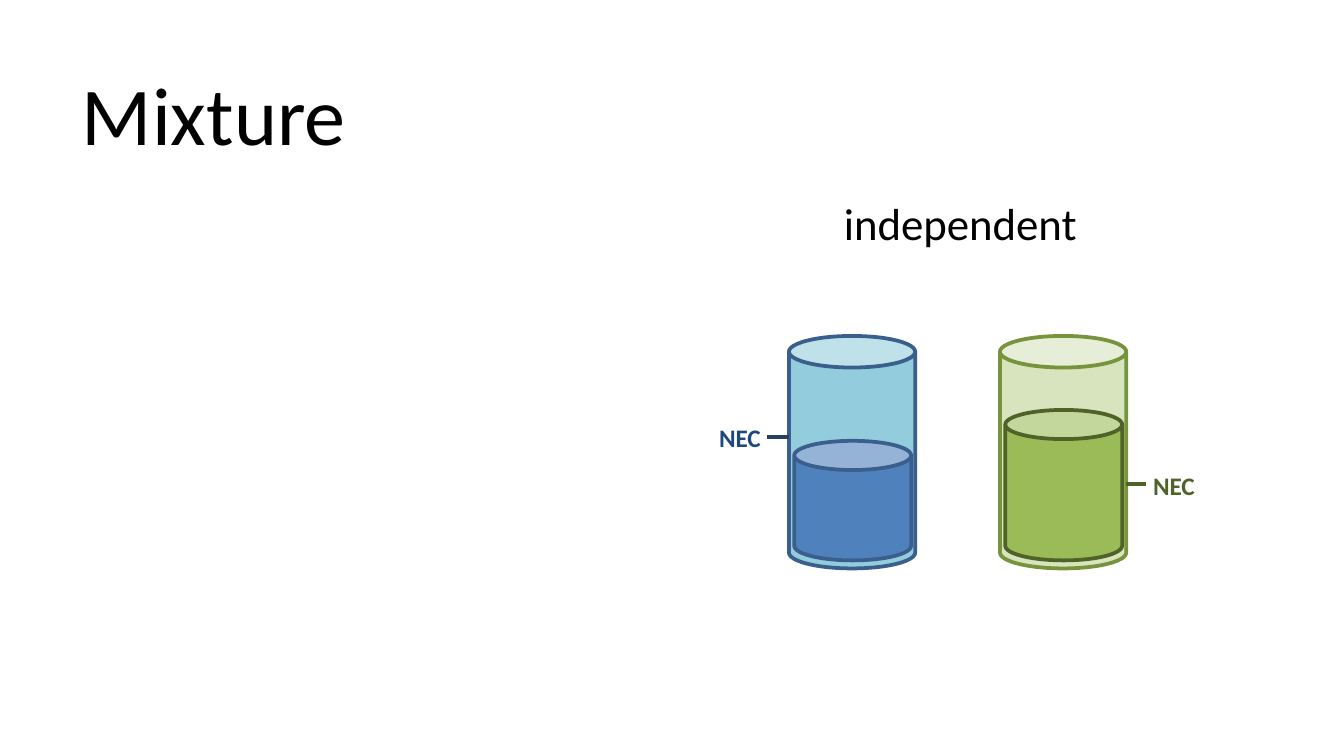
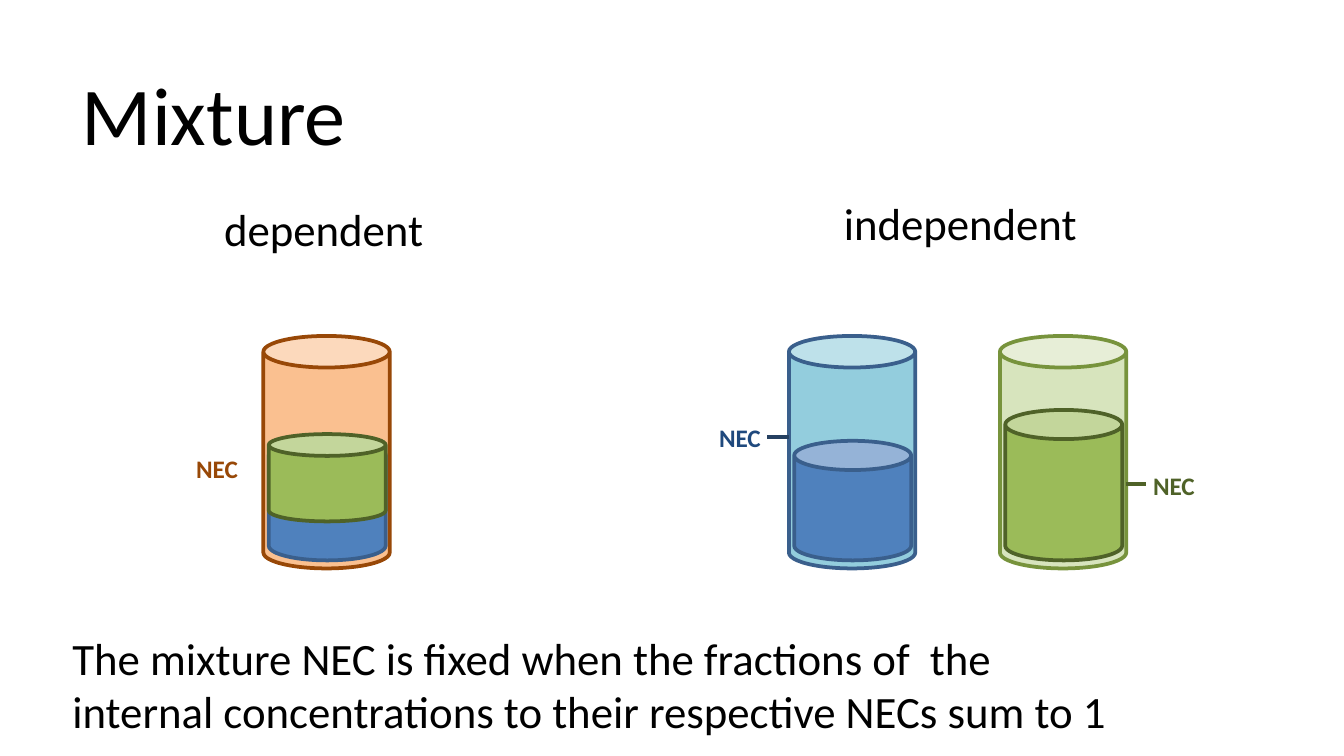
from pptx import Presentation
from pptx.util import Inches, Pt
from pptx.dml.color import RGBColor
from pptx.enum.shapes import MSO_SHAPE as Shape, MSO_CONNECTOR as Wire
from pptx.enum.text import PP_ALIGN as Align, MSO_ANCHOR as Anchor, MSO_AUTO_SIZE as Fit
from pptx.oxml.ns import qn
from lxml import etree

FONT = "Calibri"
BLACK = RGBColor(0x00, 0x00, 0x00)
WHITE = RGBColor(0xFF, 0xFF, 0xFF)
AQUA = RGBColor(0x93, 0xCD, 0xDD)
BLUE = RGBColor(0x4F, 0x81, 0xBD)
STEEL = RGBColor(0x3A, 0x5F, 0x8C)
NAVY = RGBColor(0x1F, 0x49, 0x7D)
DEEP = RGBColor(0x25, 0x40, 0x61)
PALE = RGBColor(0xD7, 0xE4, 0xBD)
GREEN = RGBColor(0x9B, 0xBB, 0x59)
OLIVE = RGBColor(0x77, 0x93, 0x3C)
MOSS = RGBColor(0x4F, 0x62, 0x28)
PEACH = RGBColor(0xFA, 0xC0, 0x90)
BROWN = RGBColor(0x98, 0x48, 0x07)

# Jars: left edge, (fill, line), liquids (top, height, fill, line),
# label (left, top, colour), tick (start, end, height, colour)
BLUE_JAR = dict(left=5.87, glass=(AQUA, STEEL),
                fluids=[(3.28, 0.89, BLUE, STEEL)],
                label=(5.35, 3.14, NAVY), tick=(5.71, 5.87, 3.25, DEEP))
GREEN_JAR = dict(left=7.44, glass=(PALE, OLIVE),
                 fluids=[(3.05, 1.12, GREEN, MOSS)],
                 label=(8.58, 3.5, MOSS), tick=(8.38, 8.53, 3.6, MOSS))
MIXED_JAR = dict(left=1.96, glass=(PEACH, BROWN),
                 fluids=[(3.28, 0.89, BLUE, STEEL), (3.23, 0.65, GREEN, MOSS)],
                 label=(1.46, 3.37, BROWN), tick=None)

# Texts: place, lines
ALONE = ((6.18, 1.41, 1.96, 0.5), ["independent"])
JOINT = ((1.57, 1.45, 1.7, 0.5), ["dependent"])
RULE = ((0.44, 4.64, 7.97, 0.91),
        ["The mixture NEC is fixed when the fractions of  the",
         "internal concentrations to their respective NECs sum to 1"])

SLIDES = [
    dict(title="Mixture", texts=[ALONE], grouped=[],
         loose=[BLUE_JAR, GREEN_JAR]),
    dict(title="Mixture", texts=[ALONE, JOINT, RULE],
         grouped=[GREEN_JAR, BLUE_JAR], loose=[MIXED_JAR]),
]

TITLE_BOX = (0.51, 0.37, 9, 0.94)
JAR_TOP, JAR_W, JAR_H = 2.5, 0.94, 1.73
FLUID_W = 0.87
GAP = 0.04  # between glass and liquid


def write(frame, lines, size=24, color=BLACK, bold=False):
    for i, line in enumerate(lines):
        para = frame.paragraphs[0] if i == 0 else frame.add_paragraph()
        para.alignment = Align.LEFT
        run = para.add_run()
        run.text = line
        font = run.font
        font.name, font.size, font.bold = FONT, Pt(size), bold
        font.color.rgb = color


def add_text(shapes, box, lines, inset=None, **style):
    frame = shapes.add_textbox(*map(Inches, box)).text_frame
    frame.word_wrap = False
    frame.auto_size = Fit.SHAPE_TO_FIT_TEXT
    if inset is not None:
        frame.margin_left = frame.margin_right = Inches(inset)
        frame.margin_top = frame.margin_bottom = Inches(inset)
    write(frame, lines, **style)


def add_can(shapes, box, fill, edge):
    can = shapes.add_shape(Shape.CAN, *map(Inches, box))
    can.shadow.inherit = False
    can.fill.solid()
    can.fill.fore_color.rgb = fill
    can.line.color.rgb = edge
    can.line.width = Pt(2)


def add_tick(shapes, start, end, y, color):
    tick = shapes.add_connector(
        Wire.STRAIGHT, Inches(start), Inches(y), Inches(end), Inches(y))
    tick.line.color.rgb = color
    tick.line.width = Pt(2.25)
    etree.SubElement(tick._element.spPr, qn("a:effectLst"))


def add_jar(shapes, left, glass, fluids, label, tick):
    add_can(shapes, (left, JAR_TOP, JAR_W, JAR_H), *glass)
    for top, height, fill, edge in fluids:
        add_can(shapes, (left + GAP, top, FLUID_W, height), fill, edge)
    x, y, color = label
    add_text(shapes, (x, y, 0.32, 0.23), ["NEC"], inset=0,
             size=13.5, color=color, bold=True)
    if tick:
        add_tick(shapes, *tick)


def add_title(slide, text):
    title = slide.shapes.title
    title.left, title.top, title.width, title.height = map(Inches, TITLE_BOX)
    frame = title.text_frame
    frame.auto_size = Fit.NONE
    frame.vertical_anchor = Anchor.MIDDLE
    write(frame, [text], size=44)


def main():
    deck = Presentation()
    deck.slide_width = Inches(10)
    deck.slide_height = deck.slide_width * 9 // 16
    for page in SLIDES:
        slide = deck.slides.add_slide(deck.slide_layouts[5])
        slide.background.fill.solid()
        slide.background.fill.fore_color.rgb = WHITE
        add_title(slide, page["title"])
        for box, lines in page["texts"]:
            add_text(slide.shapes, box, lines)
        # Jars, each in a group of its own or straight on the slide
        for jar in page["grouped"]:
            add_jar(slide.shapes.add_group_shape().shapes, **jar)
        for jar in page["loose"]:
            add_jar(slide.shapes, **jar)
    deck.save("out.pptx")


if __name__ == "__main__":
    main()
